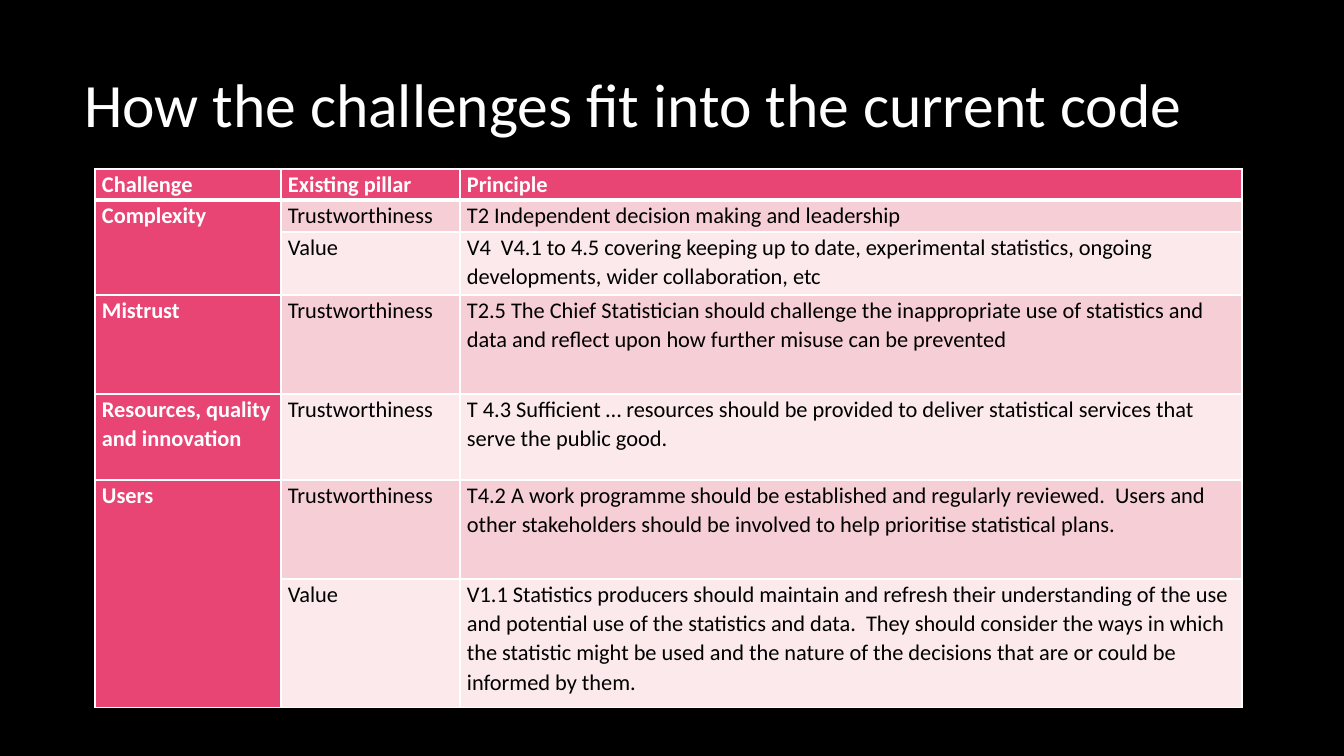
from lxml import etree
from pptx import Presentation
from pptx import util as u
from pptx.dml import color
from pptx.enum import text
from pptx.oxml import ns

SCALE = 12192000 / 1344  # EMU per px
FONT = "Calibri"
COLORS = {
    "background": "000000",
    "light": "FFFFFF",
    "dark": "000000",
    "accent": "E84574",
    "band_dark": "F6CFD6",
    "band_light": "FBE9EB",
}

COLUMN_WIDTHS = [186, 179, 782]
ROW_HEIGHTS = [31, 32, 63, 99, 86, 99, 129]
HEADINGS = ["Challenge", "Existing pillar", "Principle"]
# Each challenge with its (pillar, principle) rows
CHALLENGES = [
    ("Complexity", [
        ("Trustworthiness", "T2 Independent decision making and leadership"),
        ("Value", "V4  V4.1 to 4.5 covering keeping up to date, experimental "
                  "statistics, ongoing developments, wider collaboration, etc"),
    ]),
    ("Mistrust", [
        ("Trustworthiness", "T2.5 The Chief Statistician should challenge the "
                            "inappropriate use of statistics and data and reflect "
                            "upon how further misuse can be prevented"),
    ]),
    ("Resources, quality and innovation", [
        ("Trustworthiness", "T 4.3 Sufficient … resources should be provided to "
                            "deliver statistical services that serve the public good."),
    ]),
    ("Users", [
        ("Trustworthiness", "T4.2 A work programme should be established and "
                            "regularly reviewed.  Users and other stakeholders should "
                            "be involved to help prioritise statistical plans."),
        ("Value", "V1.1 Statistics producers should maintain and refresh their "
                  "understanding of the use and potential use of the statistics and "
                  "data.  They should consider the ways in which the statistic might "
                  "be used and the nature of the decisions that are or could be "
                  "informed by them."),
    ]),
]


def px(length):
    return u.Emu(round(length * SCALE))


def rgb(name):
    return color.RGBColor.from_string(COLORS[name])


def set_font(paragraph, size, color_name, bold=False):
    font = paragraph.font
    font.name, font.size, font.bold = FONT, u.Pt(size), bold
    font.color.rgb = rgb(color_name)


def add_borders(cell, top, bottom):
    properties = cell._tc.get_or_add_tcPr()
    for side, width in (("L", 1), ("R", 1), ("T", top), ("B", bottom)):
        line = etree.SubElement(properties, ns.qn(f"a:ln{side}"), w=str(u.Pt(width)))
        fill = etree.SubElement(line, ns.qn("a:solidFill"))
        etree.SubElement(fill, ns.qn("a:srgbClr"), val=COLORS["light"])


def style_cell(cell, row, column):
    # The header row has a thick rule beneath it
    add_borders(cell, top=3 if row == 1 else 1, bottom=3 if row == 0 else 1)
    strong = row == 0 or column == 0
    band = "band_dark" if row % 2 else "band_light"
    cell.fill.solid()
    cell.fill.fore_color.rgb = rgb("accent" if strong else band)
    cell.margin_left = cell.margin_right = px(7)
    cell.margin_top = cell.margin_bottom = 0
    paragraph = cell.text_frame.paragraphs[0]
    paragraph.line_spacing = 1.07
    paragraph.space_after = u.Pt(8)
    set_font(paragraph, 16, "light" if strong else "dark", strong)


def fill_title(slide, wording):
    title = slide.shapes.title
    title.left, title.top, title.width, title.height = map(px, (74, 28, 1195, 160))
    title.text_frame.text = wording
    title.text_frame.vertical_anchor = text.MSO_ANCHOR.MIDDLE
    paragraph = title.text_frame.paragraphs[0]
    paragraph.alignment = text.PP_ALIGN.LEFT
    paragraph.line_spacing = 0.9
    set_font(paragraph, 44, "light")


def add_challenge_table(slide):
    challenges = slide.shapes.add_table(
        len(ROW_HEIGHTS), len(COLUMN_WIDTHS), px(95), px(169),
        px(sum(COLUMN_WIDTHS)), px(sum(ROW_HEIGHTS))).table
    challenges.first_row = challenges.horz_banding = False
    for column, width in zip(challenges.columns, COLUMN_WIDTHS):
        column.width = px(width)
    for row, height in zip(challenges.rows, ROW_HEIGHTS):
        row.height = px(height)

    # Wording
    for column, heading in enumerate(HEADINGS):
        challenges.cell(0, column).text = heading
    first = 1
    for challenge, principles in CHALLENGES:
        last = first + len(principles) - 1
        challenges.cell(first, 0).text = challenge
        for row, (pillar, principle) in enumerate(principles, first):
            challenges.cell(row, 1).text = pillar
            challenges.cell(row, 2).text = principle
        if last > first:
            challenges.cell(first, 0).merge(challenges.cell(last, 0))
        first = last + 1

    # Formatting
    for row in range(len(ROW_HEIGHTS)):
        for column in range(len(COLUMN_WIDTHS)):
            style_cell(challenges.cell(row, column), row, column)


def main():
    deck = Presentation()
    deck.slide_width, deck.slide_height = px(1344), px(756)
    slide = deck.slides.add_slide(deck.slide_layouts[5])
    slide.background.fill.solid()
    slide.background.fill.fore_color.rgb = rgb("background")
    fill_title(slide, "How the challenges fit into the current code")
    add_challenge_table(slide)
    deck.save("out.pptx")


if __name__ == "__main__":
    main()
